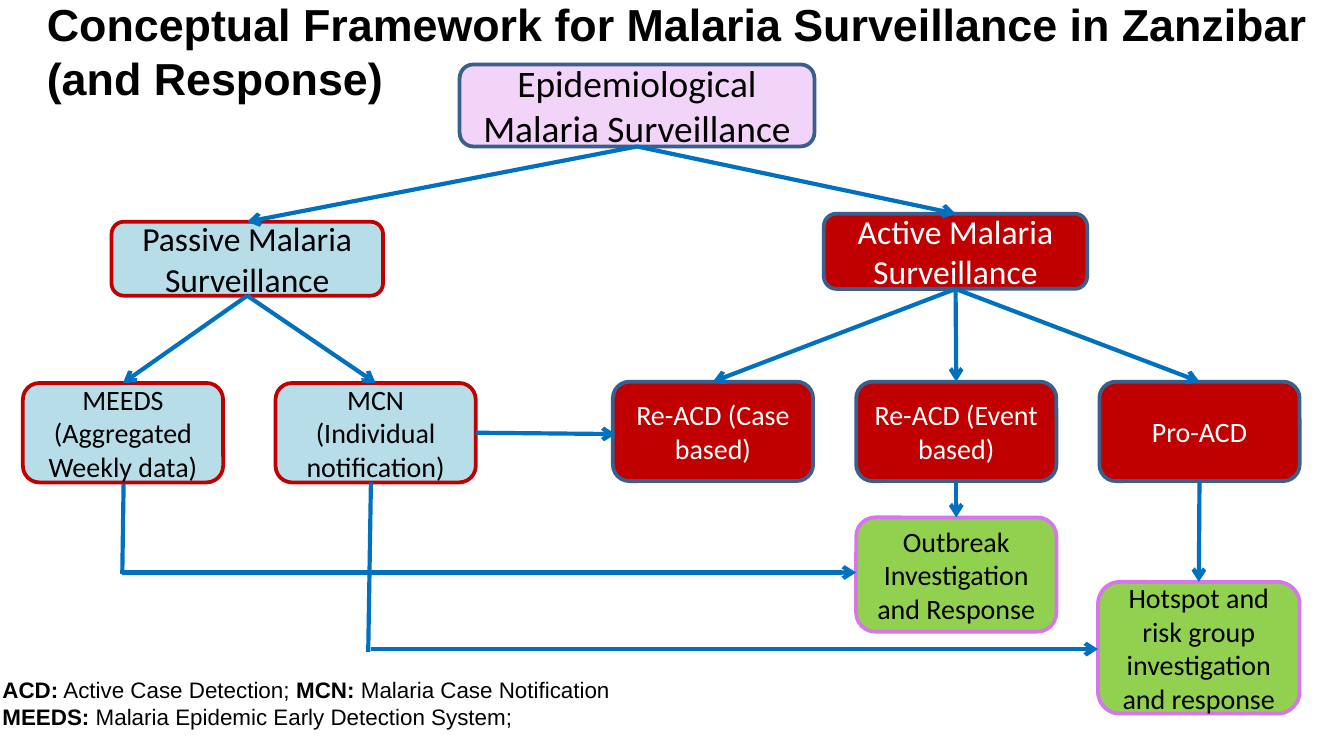
from typing import NamedTuple

from lxml import etree
from pptx import Presentation
from pptx import util as u
from pptx.dml import color
from pptx.enum import shapes, text
from pptx.oxml import ns

PX = 9144
SLIDE_WIDTH = 1000
TOP, BOTTOM = 0, 2
BLACK, WHITE, ARROW_BLUE = "000000", "FFFFFF", "0070C0"


class Style(NamedTuple):
    fill: str
    outline: str
    ink: str


class Stage(NamedTuple):
    key: str
    label: str
    left: int
    top: int
    width: int
    height: int
    style: Style
    size: int = 15


class Link(NamedTuple):
    source: str
    target: str


class Segment(NamedTuple):
    x1: int
    y1: int
    x2: int
    y2: int
    arrow: bool


class Words(NamedTuple):
    content: str
    bold: bool


OVERALL = Style("F2D4F8", "3A5F8C", BLACK)
PASSIVE = Style("B7DEE8", "C00000", BLACK)
ACTIVE = Style("C00000", "3A5F8C", WHITE)
RESPONSE = Style("92D050", "D776EA", BLACK)

STAGES = [
    Stage("case", "Re-ACD (Case based)", 456, 284, 149, 74, ACTIVE),
    Stage("surveillance", "Epidemiological Malaria Surveillance", 342, 48, 264, 61, OVERALL, 20),
    Stage("passive", "Passive Malaria Surveillance", 83, 165, 202, 55, PASSIVE, 18),
    Stage("active", "Active Malaria Surveillance", 613, 159, 196, 56, ACTIVE, 18),
    Stage("meeds", "MEEDS (Aggregated Weekly data)", 17, 285, 149, 74, PASSIVE),
    Stage("mcn", "MCN (Individual notification)", 205, 285, 149, 74, PASSIVE),
    Stage("event", "Re-ACD (Event based)", 637, 284, 149, 74, ACTIVE),
    Stage("proactive", "Pro-ACD", 818, 284, 149, 74, ACTIVE),
    Stage("outbreak", "Outbreak Investigation and Response", 637, 385, 149, 85, RESPONSE),
    Stage("hotspot", "Hotspot and risk group investigation and response", 817, 433, 150, 98, RESPONSE),
]

LINKS = [
    Link("surveillance", "passive"),
    Link("passive", "meeds"),
    Link("active", "case"),
    Link("passive", "mcn"),
    Link("active", "proactive"),
    Link("active", "event"),
    Link("surveillance", "active"),
    Link("event", "outbreak"),
    Link("proactive", "hotspot"),
]

SEGMENTS = [
    Segment(276, 359, 274, 485, False),
    Segment(276, 483, 817, 483, True),
    Segment(91, 426, 637, 426, True),
    Segment(354, 322, 458, 323, True),
    Segment(92, 360, 91, 427, False),
]

TITLE = [[Words("Conceptual Framework for Malaria Surveillance in Zanzibar (and Response)", True)]]
ABBREVIATIONS = [
    [
        Words("ACD:", True),
        Words(" Active Case Detection; ", False),
        Words("MCN: ", True),
        Words("Malaria Case Notification", False),
    ],
    [Words("MEEDS:", True), Words(" Malaria Epidemic Early Detection System;", False)],
]


def px(length: int) -> u.Emu:
    return u.Emu(length * PX)


def rgb(code: str) -> color.RGBColor:
    return color.RGBColor.from_string(code)


def add_run(paragraph, words: Words, size: int, font: str, ink: str) -> None:
    run = paragraph.add_run()
    run.text = words.content
    run.font.size = u.Pt(size)
    run.font.name = font
    run.font.bold = words.bold
    run.font.color.rgb = rgb(ink)


def draw_text(slide, left: int, top: int, width: int, height: int,
              lines: list[list[Words]], size: int, anchor) -> None:
    frame = slide.shapes.add_textbox(px(left), px(top), px(width), px(height)).text_frame
    frame.word_wrap = True
    frame.vertical_anchor = anchor
    for number, line in enumerate(lines):
        paragraph = frame.add_paragraph() if number else frame.paragraphs[0]
        for words in line:
            add_run(paragraph, words, size, "Arial", BLACK)


def draw_stage(slide, stage: Stage):
    box = slide.shapes.add_shape(
        shapes.MSO_SHAPE.ROUNDED_RECTANGLE,
        px(stage.left), px(stage.top), px(stage.width), px(stage.height))
    box.shadow.inherit = False
    box.fill.solid()
    box.fill.fore_color.rgb = rgb(stage.style.fill)
    box.line.color.rgb = rgb(stage.style.outline)
    box.line.width = u.Pt(2)
    frame = box.text_frame
    frame.word_wrap = True
    frame.margin_left = frame.margin_right = px(8)
    frame.vertical_anchor = text.MSO_ANCHOR.MIDDLE
    paragraph = frame.paragraphs[0]
    paragraph.alignment = text.PP_ALIGN.CENTER
    add_run(paragraph, Words(stage.label, False), stage.size, "Calibri", stage.style.ink)
    return box


def draw_segment(slide, segment: Segment):
    line = slide.shapes.add_connector(
        shapes.MSO_CONNECTOR.STRAIGHT,
        px(segment.x1), px(segment.y1), px(segment.x2), px(segment.y2))
    line.line.color.rgb = rgb(ARROW_BLUE)
    line.line.width = u.Pt(2.25)
    properties = line._element.spPr
    if segment.arrow:
        etree.SubElement(properties.find(ns.qn("a:ln")), ns.qn("a:tailEnd"), type="arrow")
    etree.SubElement(properties, ns.qn("a:effectLst"))
    return line


def draw_link(slide, link: Link, boxes: dict) -> None:
    arrow = draw_segment(slide, Segment(0, 0, 0, 0, True))
    arrow.begin_connect(boxes[link.source], BOTTOM)
    arrow.end_connect(boxes[link.target], TOP)


def main() -> None:
    deck = Presentation()
    deck.slide_width, deck.slide_height = px(SLIDE_WIDTH), px(SLIDE_WIDTH) * 9 // 16
    slide = deck.slides.add_slide(deck.slide_layouts[6])
    draw_text(slide, 25, 0, 975, 75, TITLE, 24, text.MSO_ANCHOR.MIDDLE)
    boxes = {stage.key: draw_stage(slide, stage) for stage in STAGES}
    for link in LINKS:
        draw_link(slide, link, boxes)
    for segment in SEGMENTS:
        draw_segment(slide, segment)
    draw_text(slide, -8, 498, 550, 50, ABBREVIATIONS, 12, text.MSO_ANCHOR.TOP)
    deck.save("out.pptx")


if __name__ == "__main__":
    main()
